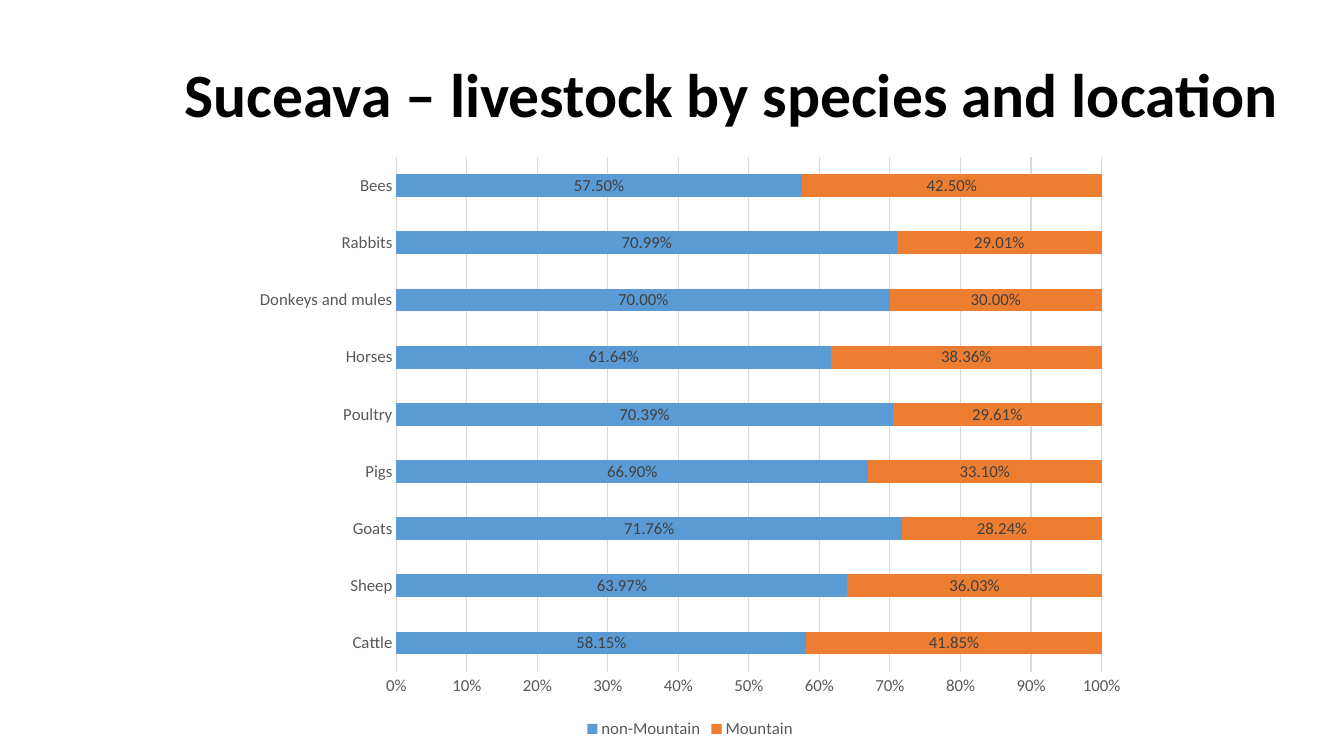
import pptx
import pptx.util
import pptx.chart.data
import pptx.dml.color
import pptx.enum.chart
import pptx.enum.text

Inches = pptx.util.Inches
Pt = pptx.util.Pt
enum = pptx.enum.chart

FACE = "Calibri"
GRID = "D9D9D9"
GREY = "595959"
KINDS = ["Cattle", "Sheep", "Goats", "Pigs", "Poultry", "Horses",
         "Donkeys and mules", "Rabbits", "Bees"]
PLAIN = [0.5815, 0.6397, 0.7176, 0.669, 0.7039, 0.6164, 0.7, 0.7099, 0.575]
PARTS = {
    "non-Mountain": ("5B9BD5", PLAIN),
    "Mountain": ("ED7D31", [round(1 - share, 4) for share in PLAIN]),
}


def color(text):
    return pptx.dml.color.RGBColor.from_string(text)


def format(item, values):
    for name, value in values.items():
        setattr(item, name, value)


def set_font(font, size, tint, bold=False):
    format(font, {"name": FACE, "size": Pt(size), "bold": bold})
    font.color.rgb = color(tint)


def set_line(line):
    line.color.rgb = color(GRID)
    line.width = Pt(0.75)


def set_place(shape, left, top, width, height):
    format(shape, {"left": Inches(left), "top": Inches(top),
                   "width": Inches(width), "height": Inches(height)})


def add_title(slide, text):
    title = slide.shapes.title
    set_place(title, 1.73, 0.27, 11.36, 1.4)
    frame = title.text_frame
    frame.text = text
    format(frame, {"word_wrap": True,
                   "auto_size": pptx.enum.text.MSO_AUTO_SIZE.NONE,
                   "vertical_anchor": pptx.enum.text.MSO_ANCHOR.MIDDLE})
    para = frame.paragraphs[0]
    format(para, {"alignment": pptx.enum.text.PP_ALIGN.LEFT,
                  "line_spacing": 0.9})
    set_font(para.runs[0].font, 44, "000000", True)


def set_axes(chart):
    for axis in (chart.category_axis, chart.value_axis):
        format(axis, {"major_tick_mark": enum.XL_TICK_MARK.NONE,
                      "minor_tick_mark": enum.XL_TICK_MARK.NONE})
        set_font(axis.tick_labels.font, 12, GREY)
    set_line(chart.category_axis.format.line)
    scale = chart.value_axis
    format(scale, {"minimum_scale": 0, "maximum_scale": 1,
                   "major_unit": 0.1, "has_major_gridlines": True})
    scale.format.line.fill.background()
    set_line(scale.major_gridlines.format.line)
    format(scale.tick_labels, {"number_format": "0%",
                               "number_format_is_linked": False})


def set_bars(plot):
    format(plot, {"gap_width": 150, "overlap": 100,
                  "vary_by_categories": False})
    for bar in plot.series:
        bar.format.fill.solid()
        bar.format.fill.fore_color.rgb = color(PARTS[bar.name][0])
        labels = bar.data_labels
        format(labels, {"show_value": True, "number_format": "0.00%",
                        "number_format_is_linked": False,
                        "position": enum.XL_LABEL_POSITION.CENTER})
        set_font(labels.font, 12, "404040")


def add_bars(slide):
    data = pptx.chart.data.CategoryChartData(number_format="0.00%")
    data.categories = KINDS
    for name, (tint, shares) in PARTS.items():
        data.add_series(name, shares)
    chart = slide.shapes.add_chart(
        enum.XL_CHART_TYPE.BAR_STACKED_100, Inches(2.4), Inches(1.44),
        Inches(8.89), Inches(5.93), data).chart
    set_font(chart.font, 10, "000000")
    format(chart, {"has_title": False, "has_legend": True})
    format(chart.legend, {"position": enum.XL_LEGEND_POSITION.BOTTOM,
                          "include_in_layout": False})
    set_font(chart.legend.font, 12, GREY)
    set_axes(chart)
    set_bars(chart.plots[0])


def main():
    deck = pptx.Presentation()
    format(deck, {"slide_width": Inches(13.33), "slide_height": Inches(7.5)})
    slide = deck.slides.add_slide(deck.slide_layouts[5])
    add_title(slide, "Suceava – livestock by species and location")
    add_bars(slide)
    deck.save("out.pptx")


if __name__ == "__main__":
    main()
